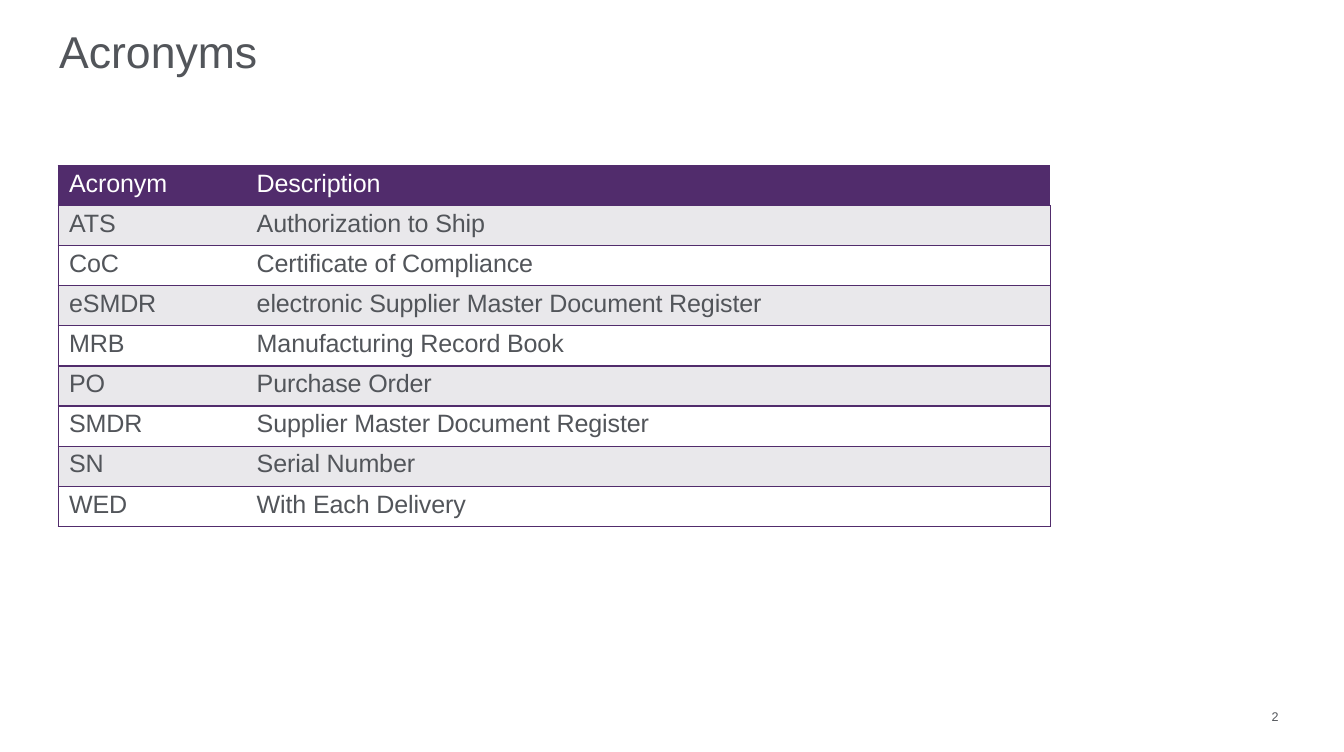
from dataclasses import dataclass

import pptx
import pptx.dml.color
import pptx.enum.text
import pptx.oxml
import pptx.oxml.ns
import pptx.util

PX = 9144  # EMU in one px, 100 px to the inch


@dataclass(frozen=True)
class Theme:
    font: str = "Arial"
    purple: str = "512C6C"
    text: str = "52555A"
    band: str = "E9E8EB"
    white: str = "FFFFFF"
    title_size: int = 32
    table_size: int = 18
    number_size: int = 9
    tracking: int = -10  # hundredths of a point
    border: int = 12700


@dataclass(frozen=True)
class Box:
    left: int
    top: int
    width: int
    height: int

    def emu(self) -> tuple[int, ...]:
        return tuple(side * PX for side in (self.left, self.top, self.width, self.height))


@dataclass(frozen=True)
class Entry:
    acronym: str
    description: str


THEME = Theme()
TITLE_BOX = Box(58, 18, 400, 56)
TABLE_BOX = Box(58, 165, 989, 360)
NUMBER_BOX = Box(1265, 707, 20, 17)
COLUMN_WIDTHS = (153, 836)
COLUMN_INDENTS = (11, 45)
CELL_TOP = 4
ENTRIES = (
    Entry("Acronym", "Description"),
    Entry("ATS", "Authorization to Ship"),
    Entry("CoC", "Certificate of Compliance"),
    Entry("eSMDR", "electronic Supplier Master Document Register"),
    Entry("MRB", "Manufacturing Record Book"),
    Entry("PO", "Purchase Order"),
    Entry("SMDR", "Supplier Master Document Register"),
    Entry("SN", "Serial Number"),
    Entry("WED", "With Each Delivery"),
)


def rgb(value: str) -> pptx.dml.color.RGBColor:
    return pptx.dml.color.RGBColor.from_string(value)


def write(paragraph, text: str, size: int, color: str, tracking: int = 0) -> None:
    paragraph.alignment = pptx.enum.text.PP_ALIGN.LEFT
    run = paragraph.add_run()
    run.text = text
    formats = {"name": THEME.font, "size": pptx.util.Pt(size), "bold": False}
    for name, value in formats.items():
        setattr(run.font, name, value)
    run.font.color.rgb = rgb(color)
    if tracking:
        run.font._element.set("spc", str(tracking))


def set_frame(frame, left: int = 0, top: int = 0) -> None:
    formats = {
        "margin_left": left * PX,
        "margin_top": top * PX,
        "margin_right": 0,
        "margin_bottom": 0,
        "vertical_anchor": pptx.enum.text.MSO_ANCHOR.TOP,
        "word_wrap": True,
    }
    for name, value in formats.items():
        setattr(frame, name, value)


def set_borders(cell, shown: dict[str, bool]) -> None:
    properties = cell._tc.get_or_add_tcPr()
    namespace = pptx.oxml.ns.nsdecls("a")
    for position, (side, visible) in enumerate(shown.items()):
        fill = (f'<a:solidFill><a:srgbClr val="{THEME.purple}"/></a:solidFill>'
                if visible else "<a:noFill/>")
        line = pptx.oxml.parse_xml(
            f'<a:{side} {namespace} w="{THEME.border}">{fill}</a:{side}>')
        properties.insert(position, line)


def add_title(slide) -> None:
    title = slide.shapes.title
    title.left, title.top, title.width, title.height = TITLE_BOX.emu()
    set_frame(title.text_frame, left=1, top=6)
    write(title.text_frame.paragraphs[0], "Acronyms", THEME.title_size, THEME.text)


def add_acronym_table(slide) -> None:
    table = slide.shapes.add_table(
        len(ENTRIES), len(COLUMN_WIDTHS), *TABLE_BOX.emu()).table
    table.first_row = table.horz_banding = False
    for column, width in zip(table.columns, COLUMN_WIDTHS):
        column.width = width * PX
    for row, entry in enumerate(ENTRIES):
        header = row == 0
        fill = THEME.purple if header else THEME.band if row % 2 else THEME.white
        color = THEME.white if header else THEME.text
        for column, text in enumerate((entry.acronym, entry.description)):
            cell = table.cell(row, column)
            cell.fill.solid()
            cell.fill.fore_color.rgb = rgb(fill)
            set_borders(cell, {
                "lnL": column == 0,
                "lnR": column == 1 and not header,
                "lnT": True,
                "lnB": True,
            })
            formats = {
                "margin_left": COLUMN_INDENTS[column] * PX,
                "margin_top": CELL_TOP * PX,
                "margin_right": 0,
                "margin_bottom": 0,
            }
            for name, value in formats.items():
                setattr(cell, name, value)
            write(cell.text_frame.paragraphs[0], text, THEME.table_size,
                  color, THEME.tracking)


def add_page_number(slide) -> None:
    number = slide.shapes.add_textbox(*NUMBER_BOX.emu())
    set_frame(number.text_frame, left=3)
    write(number.text_frame.paragraphs[0], "2", THEME.number_size,
          THEME.text, THEME.tracking)


def main() -> None:
    presentation = pptx.Presentation()
    presentation.slide_width = 1340 * PX
    presentation.slide_height = 750 * PX
    slide = presentation.slides.add_slide(presentation.slide_layouts[5])  # title only
    add_title(slide)
    add_acronym_table(slide)
    add_page_number(slide)
    presentation.save("out.pptx")


if __name__ == "__main__":
    main()
